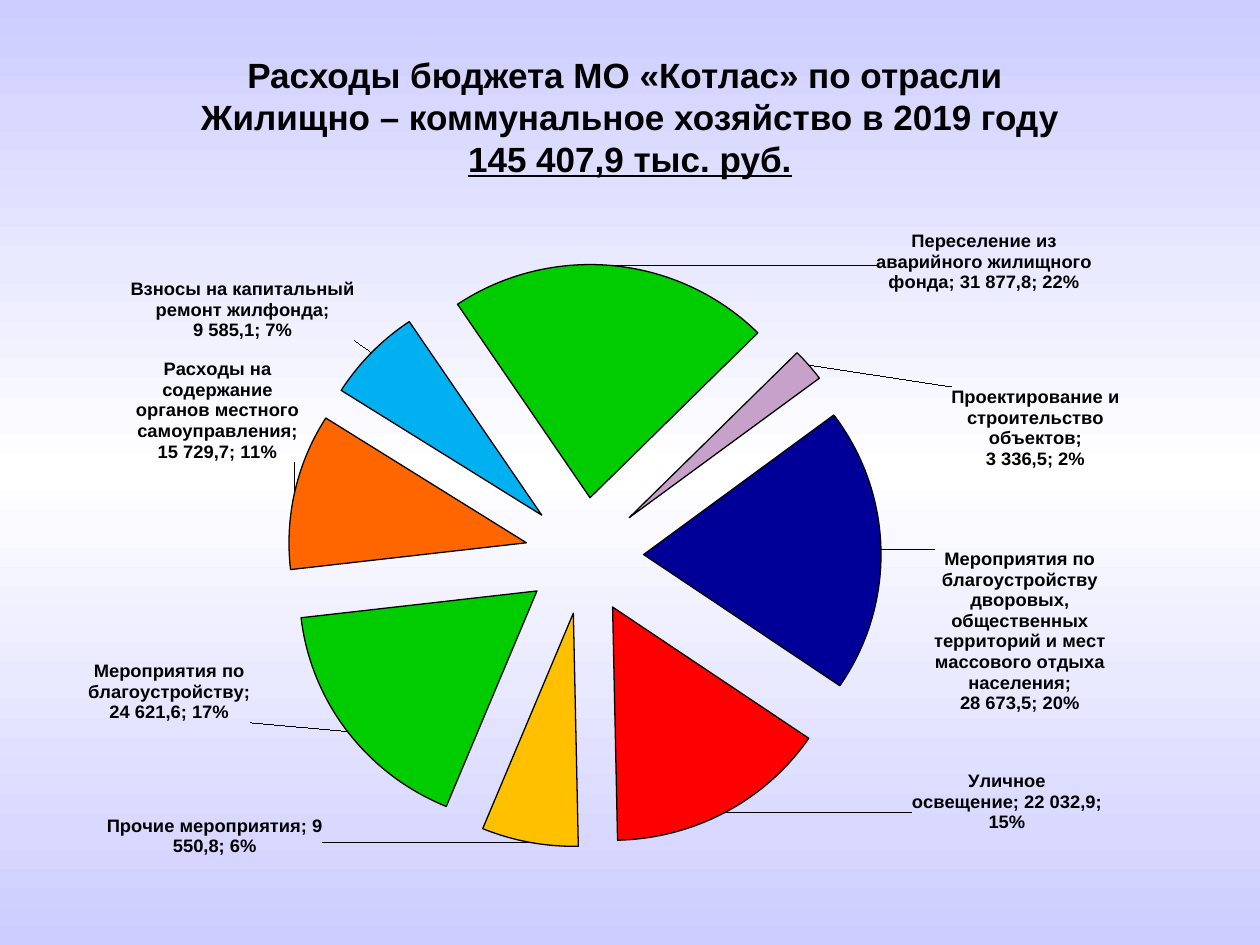
from copy import deepcopy
from math import cos, radians, sin

from pptx import Presentation
from pptx.chart.data import CategoryChartData
from pptx.dml.color import RGBColor
from pptx.enum.chart import XL_CHART_TYPE, XL_LABEL_POSITION
from pptx.enum.text import MSO_ANCHOR, PP_ALIGN
from pptx.oxml import parse_xml
from pptx.oxml.ns import nsdecls, qn
from pptx.util import Inches, Pt

PIE = XL_CHART_TYPE.PIE_EXPLODED
OUTER = XL_LABEL_POSITION.OUTSIDE_END
CENTER = PP_ALIGN.CENTER
MIDDLE = MSO_ANCHOR.MIDDLE

FONT = "Arial"
START = 45
FRAME = (0.47, 1.56, 9.06, 5.51)
PLOT = (0.2, 0.07, 0.52, 0.89)
HEX = {
    "ink": "000000", "edge": "CCCCFF", "white": "FFFFFF", "mauve": "C8A1CB",
    "navy": "000099", "red": "FF0000", "gold": "FFC000", "green": "00CC00",
    "orange": "FF6600", "sky": "00B0F0",
}

# value, colour, label, corner of the label that faces the pie (inches)
PARTS = [
    (3336.5, "mauve", "Проектирование и\nстроительство\nобъектов;\n3 336,5; 2%",
     (7.54, 3.69)),
    (28673.5, "navy", "Мероприятия по\nблагоустройству\nдворовых,\nобщественных\n"
     "территорий и мест\nмассового отдыха\nнаселения;\n28 673,5; 20%", (7.46, 5.03)),
    (22032.9, "red", "Уличное\nосвещение; 22 032,9;\n15%", (7.21, 6.13)),
    (9550.8, "gold", "Прочие мероприятия; 9\n550,8; 6%", (2.56, 6.48)),
    (24621.6, "green", "Мероприятия по\nблагоустройству;\n24 621,6; 17%", (2, 5.24)),
    (15729.7, "orange", "Расходы на содержание\nорганов местного\nсамоуправления;\n"
     "15 729,7; 11%", (2.33, 3.63)),
    (9585.1, "sky", "Взносы на капитальный\nремонт жилфонда;\n9 585,1; 7%",
     (2.78, 2.65)),
    (31877.8, "green", "Переселение из\nаварийного жилищного\nфонда; 31 877,8; 22%",
     (6.99, 2.25)),
]


def tint(name):
    return RGBColor.from_string(HEX[name])


def write(para, text, size=20, bold=True, under=None):
    """Add text to a centred paragraph; line ends become line breaks."""
    para.alignment = CENTER
    for i, line in enumerate(text.split("\n")):
        if i:
            para.add_line_break()
        if not line:
            continue
        run = para.add_run()
        run.text = line
        font = run.font
        font.name, font.size = FONT, Pt(size)
        font.bold, font.underline = bold, under
        font.color.rgb = tint("ink")


def layout(**spots):
    """Build a manual chart layout from its settings."""
    rows = "".join(f'<c:{k} val="{v}"/>' for k, v in spots.items())
    return parse_xml(f"<c:layout {nsdecls('c')}>"
                     f"<c:manualLayout>{rows}</c:manualLayout></c:layout>")


def shift(i, corner):
    """Offset of a label from its place at the rim, as parts of the frame."""
    vals = [p[0] for p in PARTS]
    turn = radians(START + 360 * (sum(vals[:i]) + vals[i] / 2) / sum(vals))
    left, top, wide, high = FRAME
    x, y, w, h = PLOT
    reach = w * wide / 2 + 0.06
    rim_x = left + (x + w / 2) * wide + reach * sin(turn)
    rim_y = top + (y + h / 2) * high - reach * cos(turn)
    return round((corner[0] - rim_x) / wide, 2), round((corner[1] - rim_y) / high, 2)


class Page:
    def __init__(self, deck):
        self.slide = deck.slides.add_slide(deck.slide_layouts[6])
        self.shapes = self.slide.shapes

    def back(self):
        fill = self.slide.background.fill
        fill.gradient()
        fill.gradient_angle = 90
        for stop, pos in zip(fill.gradient_stops, (0, 1)):
            stop.color.rgb = tint("edge")
            stop.position = pos
        stops = self.slide._element.find(".//" + qn("a:gsLst"))
        stops.insert(1, deepcopy(stops[0]))
        mid = fill.gradient_stops[1]
        mid.color.rgb = tint("white")
        mid.position = 0.5

    def box(self, x, y, w, h):
        frame = self.shapes.add_textbox(*map(Inches, (x, y, w, h))).text_frame
        frame.word_wrap = True
        frame.vertical_anchor = MIDDLE
        return frame.paragraphs[0]

    def label(self, point, text, spot):
        tag = point.data_label
        frame = tag.text_frame
        for i, line in enumerate(text.split("\n")):
            para = frame.add_paragraph() if i else frame.paragraphs[0]
            write(para, line, size=10.5)
        tag.position = OUTER
        node = frame._txBody.getparent().getparent()
        old = node.find(qn("c:layout"))
        if old is not None:
            node.remove(old)
        node.insert(1, layout(x=spot[0], y=spot[1]))

    def pie(self):
        data = CategoryChartData(number_format="0.0")
        data.categories = [p[2].rsplit(";", 2)[0].replace("\n", " ") for p in PARTS]
        data.add_series("Series 1", [p[0] for p in PARTS])
        chart = self.shapes.add_chart(PIE, *map(Inches, FRAME), data).chart
        chart.has_legend = chart.has_title = False
        chart.font.name, chart.font.size = FONT, Pt(18)
        chart.font.color.rgb = tint("ink")
        plot = chart.plots[0]
        plot.vary_by_categories = True
        series = plot.series[0]

        # Slices and their labels
        for i, (_, color, text, corner) in enumerate(PARTS):
            point = series.points[i]
            style = point.format
            style.fill.solid()
            style.fill.fore_color.rgb = tint(color)
            style.line.color.rgb = tint("ink")
            style.line.width = Pt(0.75)
            self.label(point, text, shift(i, corner))
        tags = series.data_labels
        tags.show_value = tags.show_percentage = tags.show_category_name = True
        tags.position = OUTER
        tags.font.name, tags.font.size, tags.font.bold = FONT, Pt(10.5), True
        tags.font.color.rgb = tint("ink")
        lead = tags._element.find(qn("c:showLeaderLines"))
        if lead is None:
            lead = parse_xml(f"<c:showLeaderLines {nsdecls('c')}/>")
            tags._element.append(lead)
        lead.set("val", "1")

        # Slice gap, first angle and plot place
        for gap in plot._element.iter(qn("c:explosion")):
            gap.set("val", "25")
        turn = plot._element.find(qn("c:firstSliceAng"))
        if turn is None:
            turn = parse_xml(f"<c:firstSliceAng {nsdecls('c')}/>")
            plot._element.append(turn)
        turn.set("val", str(START))
        area = plot._element.getparent()
        old = area.find(qn("c:layout"))
        if old is not None:
            area.remove(old)
        x, y, w, h = PLOT
        area.insert(0, layout(layoutTarget="inner", xMode="edge", yMode="edge",
                              x=x, y=y, w=w, h=h))


def main():
    deck = Presentation()
    deck.slide_width, deck.slide_height = Inches(10), Inches(7.5)
    page = Page(deck)
    page.back()
    page.pie()

    # Title
    head = page.box(0.5, 0.3, 9, 1.25)
    write(head, "Расходы бюджета МО «Котлас» по отрасли \n"
                "Жилищно – коммунальное хозяйство в 2019 году\n")
    write(head, "145 407,9 тыс. руб.", under=True)

    deck.save("out.pptx")


if __name__ == "__main__":
    main()
